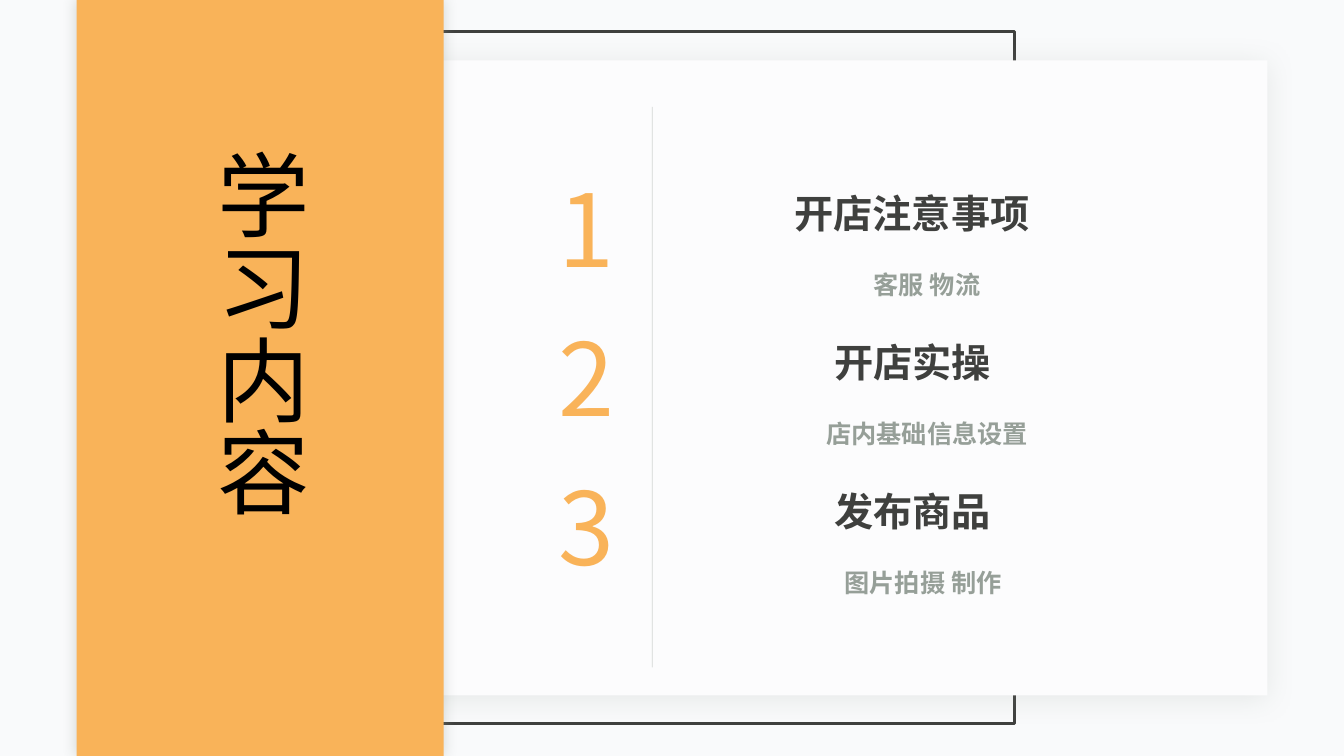
import dataclasses
import typing

import lxml.etree
import pptx
import pptx.dml.color
import pptx.enum.shapes
import pptx.enum.text
import pptx.oxml
import pptx.oxml.ns
import pptx.util

Inches = pptx.util.Inches
Pt = pptx.util.Pt
Align = pptx.enum.text.PP_ALIGN
qn = pptx.oxml.ns.qn

FONT = "Noto Sans CJK SC"
ORANGE, DARK, GREY = "F9B359", "3F403E", "969F98"
FIRST_TOP, ROW_PITCH = 1.6, 1.48


@dataclasses.dataclass
class Topic:
    heading: str
    heading_left: float
    heading_width: float
    detail: str
    detail_left: float


@dataclasses.dataclass
class TextStyle:
    size: float
    color: str
    bold: bool = False
    spacing: float = 0


@dataclasses.dataclass
class Shadow:
    opacity: int
    blur: float
    distance: float
    direction: int


TOPICS = [
    Topic("开店注意事项", 7.78, 2.53, "客服 物流", 6.73),
    Topic("开店实操", 8.17, 1.76, "店内基础信息设置", 6.73),
    Topic("发布商品", 8.17, 1.76, "图片拍摄 制作", 6.69),
]
TITLE_STYLE = TextStyle(66, "000000")
NUMBER_STYLE = TextStyle(72, ORANGE, spacing=-3)
HEADING_STYLE = TextStyle(28, DARK, bold=True)
DETAIL_STYLE = TextStyle(18, GREY, bold=True)


def rgb(color: str) -> pptx.dml.color.RGBColor:
    return pptx.dml.color.RGBColor.from_string(color)


def format_text(text_frame, style: TextStyle, align) -> None:
    for paragraph in text_frame.paragraphs:
        paragraph.alignment = align
        for run in paragraph.runs:
            run.font.name = FONT
            run.font.size = Pt(style.size)
            run.font.bold = style.bold
            run.font.color.rgb = rgb(style.color)
            properties = run.font._element
            east_asian = lxml.etree.Element(qn("a:ea"), typeface=FONT)
            properties.find(qn("a:latin")).addnext(east_asian)
            if style.spacing:
                properties.set("spc", str(int(style.spacing * 100)))


def add_text(slide, box: tuple, text: str, style: TextStyle,
             wrap: bool = False, grow: bool = True) -> None:
    shape = slide.shapes.add_textbox(*map(Inches, box))
    text_frame = shape.text_frame
    text_frame.text = text
    text_frame.word_wrap = wrap
    sizes = pptx.enum.text.MSO_AUTO_SIZE
    text_frame.auto_size = sizes.SHAPE_TO_FIT_TEXT if grow else sizes.NONE
    format_text(text_frame, style, Align.CENTER)


def add_shadow(shape, shadow: Shadow) -> None:
    effects = shape.element.spPr.find(qn("a:effectLst"))
    outer = lxml.etree.SubElement(
        effects, qn("a:outerShdw"), blurRad=str(Pt(shadow.blur)),
        dist=str(Pt(shadow.distance)), dir=str(shadow.direction * 60000),
        algn="ctr", rotWithShape="0")
    color = lxml.etree.SubElement(outer, qn("a:srgbClr"), val=GREY)
    lxml.etree.SubElement(color, qn("a:alpha"), val=str(shadow.opacity * 1000))


def add_panel(slide, box: tuple, fill: typing.Optional[str] = None,
              line: typing.Optional[str] = None,
              shadow: typing.Optional[Shadow] = None) -> None:
    shape = slide.shapes.add_shape(
        pptx.enum.shapes.MSO_SHAPE.RECTANGLE, *map(Inches, box))
    shape.shadow.inherit = False
    if fill:
        shape.fill.solid()
        shape.fill.fore_color.rgb = rgb(fill)
    else:
        shape.fill.background()
    if line:
        shape.line.color.rgb = rgb(line)
        shape.line.width = Pt(2)
    else:
        shape.line.fill.background()
    if shadow:
        add_shadow(shape, shadow)


def add_divider(slide, left: float, top: float, bottom: float) -> None:
    connector = slide.shapes.add_connector(
        pptx.enum.shapes.MSO_CONNECTOR.STRAIGHT,
        *map(Inches, (left, top, left, bottom)))
    connector.line.color.rgb = rgb(GREY)
    connector.line.width = Pt(0.5)
    properties = connector.element.spPr
    color = properties.find(".//" + qn("a:srgbClr"))
    lxml.etree.SubElement(color, qn("a:alpha"), val="40000")
    lxml.etree.SubElement(properties, qn("a:effectLst"))


def add_title(slide, text: str) -> None:
    title = slide.shapes.title
    title.left, title.top, title.width, title.height = map(
        Inches, (1.92, 1.43, 1.31, 4.37))
    text_frame = title.text_frame
    text_frame.text = text
    text_frame.word_wrap = True
    text_frame.auto_size = pptx.enum.text.MSO_AUTO_SIZE.SHAPE_TO_FIT_TEXT
    text_frame.vertical_anchor = pptx.enum.text.MSO_ANCHOR.TOP
    title.element.txBody.bodyPr.set("vert", "eaVert")
    format_text(text_frame, TITLE_STYLE, Align.LEFT)
    # Bring the title in front of the orange band
    title.element.getparent().append(title.element)


def main() -> None:
    presentation = pptx.Presentation()
    presentation.slide_width = Inches(13.33)
    presentation.slide_height = Inches(7.5)
    slide = presentation.slides.add_slide(presentation.slide_layouts[5])
    slide.background.fill.solid()
    slide.background.fill.fore_color.rgb = rgb("F9FAFB")

    # Outline frame and card
    add_panel(slide, (2.54, 0.31, 7.52, 6.87), line=DARK)
    add_panel(slide, (2.35, 0.6, 10.22, 6.3), fill="FCFCFD",
              shadow=Shadow(20, 20, 3, 90))

    # Numbered topics
    add_divider(slide, 6.47, 1.06, 6.62)
    for index, topic in enumerate(TOPICS):
        top = FIRST_TOP + index * ROW_PITCH
        add_text(slide, (5.44, top, 0.75, 1.31), str(index + 1), NUMBER_STYLE)
        add_text(slide, (topic.heading_left, top + 0.23,
                         topic.heading_width, 0.57),
                 topic.heading, HEADING_STYLE)
        add_text(slide, (topic.detail_left, top + 1.02, 4.93, 0.5),
                 topic.detail, DETAIL_STYLE, wrap=True, grow=False)

    # Orange band with the vertical title
    add_panel(slide, (0.76, 0, 3.64, 7.5), fill=ORANGE,
              shadow=Shadow(40, 10, 0, 0))
    add_title(slide, "学习内容")
    presentation.save("out.pptx")


if __name__ == "__main__":
    main()
